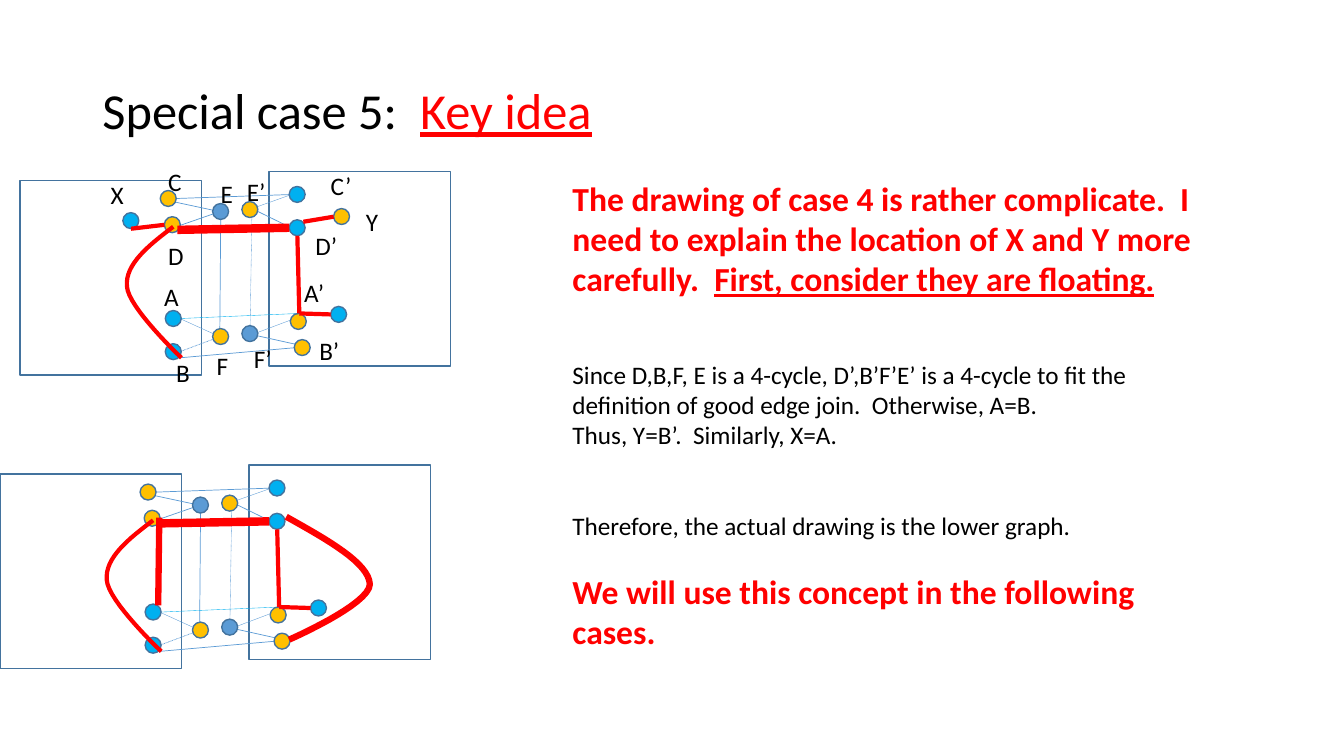
from dataclasses import dataclass

from lxml.etree import SubElement
from pptx import Presentation
from pptx.dml.color import RGBColor as Color
from pptx.enum.dml import MSO_LINE as Dash
from pptx.enum.shapes import MSO_CONNECTOR as Link, MSO_SHAPE as Preset
from pptx.enum.text import MSO_ANCHOR as Anchor, MSO_AUTO_SIZE as Fit, PP_ALIGN as Align
from pptx.oxml.ns import qn
from pptx.util import Pt


@dataclass(frozen=True)
class Theme:
    font: str = "Calibri"
    title: int = 36
    strong: int = 24
    text: int = 18
    black: str = "000000"
    red: str = "FF0000"
    gold: str = "FFC000"
    sky: str = "00B0F0"
    blue: str = "5B9BD5"
    outline: str = "43739E"


THEME = Theme()
TITLE = [("Special case 5:  ", {}), ("Key idea", dict(color=THEME.red, underline=True))]
STRONG = dict(size=THEME.strong, color=THEME.red, bold=True)
BODY = [
    (0, [("The drawing of case 4 is rather complicate.  I  need to explain the location "
          "of X and Y more carefully.  ", STRONG),
         ("First, consider they are floating.", dict(STRONG, underline=True))]),
    (43, [("Since D,B,F, E is a 4-cycle, D’,B’F’E’ is a 4-cycle to fit the definition of "
           "good edge join.  Otherwise, A=B.", {})]),
    (0, [("Thus, Y=B’.  Similarly, X=A.", {})]),
    (43.5, [("Therefore, the actual drawing is the lower graph.", {})]),
    (21.5, [("We will use this concept in the following cases.", STRONG)]),
]
LABELS = [
    ("A", 110.2, 197.3), ("B", 118.8, 252), ("A’", 210.2, 194.4), ("C’", 229, 118.1),
    ("X", 72, 124.6), ("B’", 221, 236.2), ("Y", 254.2, 144), ("D", 113, 167.8),
    ("C", 113, 115.2), ("D’", 218.2, 160.6), ("E", 150.5, 123.8), ("F", 147.6, 247),
    ("E’", 169.2, 122.4), ("F’", 174.2, 241.9),
]
LABEL_WIDTHS = {1: 26, 2: 34}
FRAMES = [(14.4, 128.9), (192.2, 122.4)]
FRAME_SIZE = (129.6, 139)
NODE_SIZE = 11.4
NODES = {
    THEME.blue: [(151.9, 145.4), (172.8, 232.6)],
    THEME.gold: [(151.9, 234.7), (117.4, 154.8), (114.5, 136.1), (172.8, 144),
                 (207.4, 223.9), (210.2, 242.6)],
    THEME.sky: [(118.1, 245.5), (118.1, 221.8), (206.6, 133.2), (206.6, 157),
                (236.2, 218.9)],
}
FLOATING_NODES = {THEME.gold: [(238.3, 149)], THEME.sky: [(87.8, 151.9)]}
E, F, E_PRIME, F_PRIME = (157, 151.2), (157, 240.5), (180, 149), (180, 239)
CORNER = (213.8, 223.9)
EDGES = {
    (THEME.blue, 0.5, None): [
        ((157.7, 151.2), F), (E, (120.2, 143.3)), (E, (123.8, 162.7)),
        (F_PRIME, (216, 247)), (E_PRIME, (212.4, 164.9)),
        ((126, 141.8), (206.6, 139)), ((128.2, 255.6), (210.2, 248.4))],
    (THEME.blue, 0.25, None): [
        (F, (123.8, 225.4)), (F_PRIME, (212.4, 226.8)), (E_PRIME, (208.1, 139))],
    (THEME.blue, 0.5, Dash.ROUND_DOT): [(F, (128.2, 251.3))],
    (THEME.blue, 0.25, Dash.ROUND_DOT): [((178.6, 239), E_PRIME)],
    (THEME.sky, 0.25, None): [((129.6, 227.5), CORNER)],
}
BOLD_EDGES = {
    (THEME.red, 6, None): [((126.7, 164.2), (206.6, 162.7))],
    (THEME.red, 3, None): [((212.4, 168.5), CORNER), (CORNER, (236.2, 224.6))],
}
FLOATING_EDGES = {(THEME.red, 3, None): [((216.7, 158.4), (238.3, 154.8)),
                                         ((93.6, 163.4), (117.4, 160.6))]}
FIXED_EDGES = {(THEME.red, 4.5, None): [((128.2, 160.1), (127.4, 222.7))]}
LEFT_CURVE = (3, [(123.8, 162), (106.6, 175), (89.3, 188.6), (90.7, 204.5),
                  (91.4, 219.6), (129.6, 255.6), (129.6, 255.6)])
RIGHT_CURVE = (4.5, [(218.9, 159.4), (248.4, 175.9), (277.9, 192.5), (278.6, 207.6),
                     (278.6, 222), (221, 247.2), (221, 247.2)])
LOWER_SHIFT = (-14.4, 209.7)


def add_span(para, text, size=THEME.text, color=THEME.black, bold=False, underline=False):
    """Append formatted text to a paragraph."""
    span = para.add_run()
    span.text = text
    span.font.name, span.font.size = THEME.font, Pt(size)
    span.font.bold, span.font.underline = bold, underline
    span.font.color.rgb = Color.from_string(color)


def set_line(item, color, width, dash=None):
    """Format the line of a shape or connector."""
    item.line.color.rgb = Color.from_string(color)
    item.line.width = Pt(width)
    if dash:
        item.line.dash_style = dash


def add_outline(shapes, preset, left, top, width, height, fill=None):
    """Draw an outlined preset shape, filled or hollow."""
    box = shapes.add_shape(preset, Pt(left), Pt(top), Pt(width), Pt(height))
    box.shadow.inherit = False
    set_line(box, THEME.outline, 1)
    if fill:
        box.fill.solid()
        box.fill.fore_color.rgb = Color.from_string(fill)
    else:
        box.fill.background()


def curve_points(controls, steps=16):
    """Sample a chain of cubic curves."""
    points = [controls[0]]
    for first in range(0, len(controls) - 1, 3):
        part = controls[first:first + 4]
        for step in range(1, steps + 1):
            t = step / steps
            weights = ((1 - t) ** 3, 3 * t * (1 - t) ** 2, 3 * t * t * (1 - t), t ** 3)
            points.append(tuple(sum(w * p[axis] for w, p in zip(weights, part))
                                for axis in (0, 1)))
    return points


def draw_graph(shapes, nodes, edges, curves, shift=(0, 0)):
    """Draw one graph, moved by the given shift."""
    def move(point):
        return point[0] + shift[0], point[1] + shift[1]

    def draw_edges(styles):
        for style, pairs in styles.items():
            for start, end in pairs:
                ends = [Pt(value) for value in move(start) + move(end)]
                edge = shapes.add_connector(Link.STRAIGHT, *ends)
                set_line(edge, *style)
                SubElement(edge._element.spPr, qn("a:effectLst"))

    for corner in FRAMES:
        add_outline(shapes, Preset.RECTANGLE, *move(corner), *FRAME_SIZE)
    draw_edges(EDGES)
    for group in (NODES, nodes):
        for fill, corners in group.items():
            for corner in corners:
                add_outline(shapes, Preset.OVAL, *move(corner), NODE_SIZE, NODE_SIZE, fill)
    draw_edges(BOLD_EDGES)
    draw_edges(edges)
    for width, controls in curves:
        points = [tuple(Pt(value) for value in move(point))
                  for point in curve_points(controls)]
        builder = shapes.build_freeform(*points[0], scale=1.0)
        builder.add_line_segments(points[1:], close=False)
        curve = builder.convert_to_shape()
        curve.shadow.inherit = False
        curve.fill.background()
        set_line(curve, THEME.red, width)


def add_texts(page):
    """Write the title and the explanation."""
    title = page.shapes.title
    title.left, title.top, title.width, title.height = Pt(66), Pt(28.8), Pt(410), Pt(104.4)
    title.text_frame.vertical_anchor = Anchor.MIDDLE
    para = title.text_frame.paragraphs[0]
    para.alignment, para.line_spacing = Align.LEFT, 0.9
    for text, look in TITLE:
        add_span(para, text, **{"size": THEME.title, **look})
    frame = page.shapes.add_textbox(Pt(401.8), Pt(123.4), Pt(471.6), Pt(370.8)).text_frame
    frame.word_wrap = True
    for index, (gap, spans) in enumerate(BODY):
        para = frame.add_paragraph() if index else frame.paragraphs[0]
        para.space_before = Pt(gap)
        for text, look in spans:
            add_span(para, text, **look)


def add_labels(page):
    """Name the nodes of the upper graph."""
    for text, left, top in LABELS:
        width = LABEL_WIDTHS[len(text)]
        frame = page.shapes.add_textbox(Pt(left), Pt(top), Pt(width), Pt(29)).text_frame
        frame.word_wrap, frame.auto_size = False, Fit.NONE
        frame.paragraphs[0].alignment = Align.LEFT
        add_span(frame.paragraphs[0], text)


def main():
    """Build and save the slide."""
    deck = Presentation()
    deck.slide_width, deck.slide_height = Pt(960), Pt(540)
    page = deck.slides.add_slide(deck.slide_layouts.get_by_name("Title Only"))
    add_texts(page)
    draw_graph(page.shapes, FLOATING_NODES, FLOATING_EDGES, [LEFT_CURVE])
    lower = page.shapes.add_group_shape()
    draw_graph(lower.shapes, {}, FIXED_EDGES, [LEFT_CURVE, RIGHT_CURVE], LOWER_SHIFT)
    add_labels(page)
    deck.save("out.pptx")


if __name__ == "__main__":
    main()
